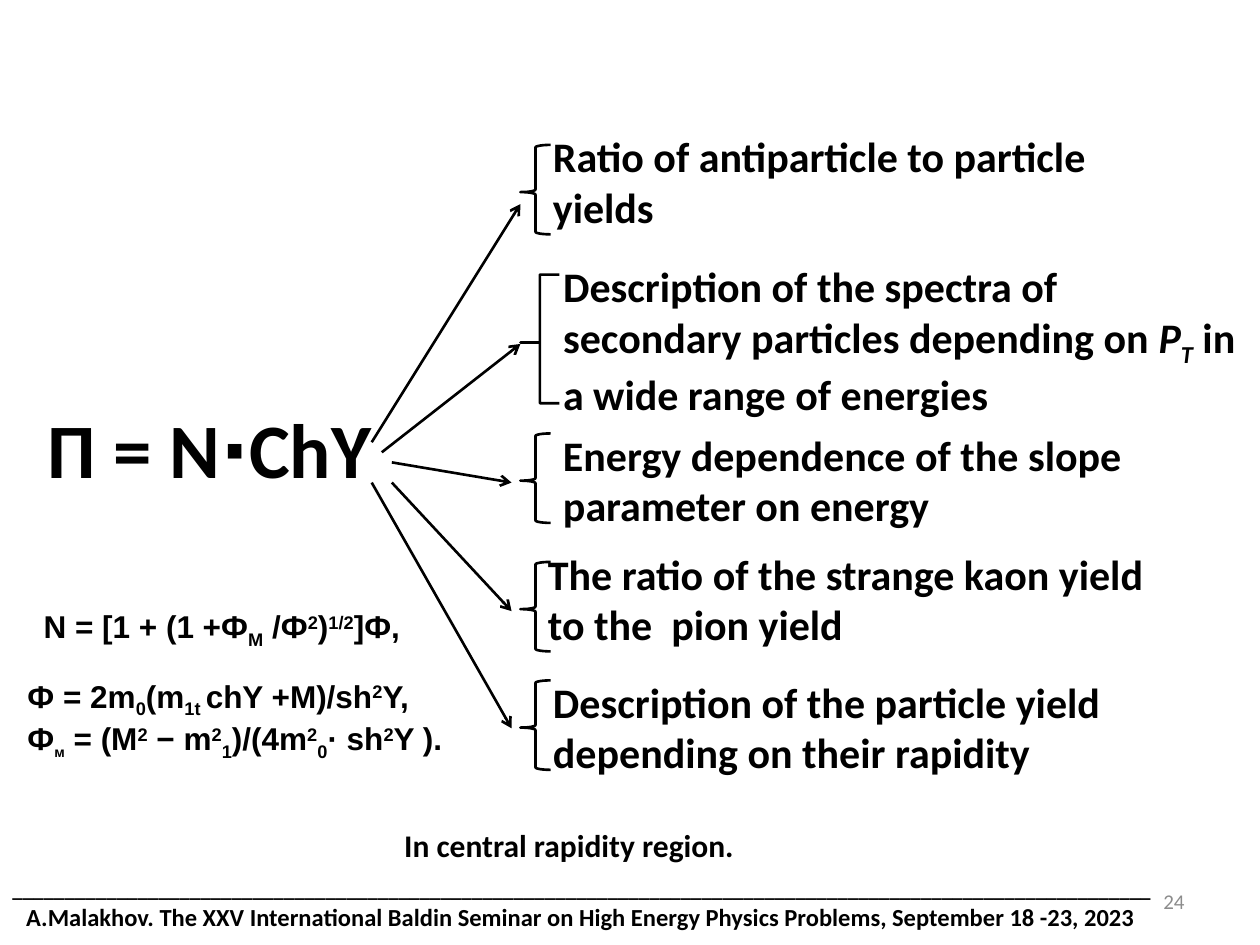
from dataclasses import dataclass

from lxml.etree import SubElement
from pptx import Presentation
from pptx.dml.color import RGBColor
from pptx.enum.shapes import MSO_CONNECTOR, MSO_SHAPE
from pptx.enum.text import MSO_ANCHOR, PP_ALIGN
from pptx.oxml.ns import qn
from pptx.util import Inches, Pt

BLACK, GRAY = "000000", "8C8C8C"
SUB, SUP = -25, 30
BRACE_LEFT = 4.13


@dataclass
class Span:
    text: str
    baseline: int = 0
    italic: bool = False
    size: float | None = None


@dataclass
class Property:
    """One consequence: its text box, its brace and the arrow to it."""
    spans: list[Span]
    box: tuple[float, float, float, float]
    brace_top: float
    arrow_from: tuple[float, float]
    arrow_to: tuple[float, float]
    brace_size: tuple[float, float] = (0.24, 0.71)
    curl: float = 0.083


def color(value: str) -> RGBColor:
    return RGBColor.from_string(value)


def sub(text: str, **options) -> Span:
    return Span(text, SUB, **options)


def sup(text: str) -> Span:
    return Span(text, SUP)


def add_text(page, box, lines: list[list[Span]], size: float, font="Calibri", bold=True,
             fill=BLACK, align=PP_ALIGN.LEFT, anchor=MSO_ANCHOR.TOP, wrap=True):
    frame = page.shapes.add_textbox(*map(Inches, box)).text_frame
    frame.word_wrap = wrap
    frame.vertical_anchor = anchor
    for index, spans in enumerate(lines):
        para = frame.paragraphs[0] if index == 0 else frame.add_paragraph()
        para.alignment = align
        para.font.name, para.font.size, para.font.bold = font, Pt(size), bold
        para.font.color.rgb = color(fill)
        for span in spans:
            run = para.add_run()
            run.text = span.text
            if span.italic:
                run.font.italic = True
            if span.size:
                run.font.size = Pt(span.size)
            if span.baseline:
                run._r.get_or_add_rPr().set("baseline", str(span.baseline * 1000))
    return frame


def add_arrow(page, start: tuple[float, float], end: tuple[float, float]) -> None:
    arrow = page.shapes.add_connector(MSO_CONNECTOR.STRAIGHT, *map(Inches, start + end))
    arrow.line.color.rgb = color(BLACK)
    arrow.line.width = Pt(1.5)
    SubElement(arrow.line._get_or_add_ln(), qn("a:tailEnd"), type="arrow")
    SubElement(arrow._element.spPr, qn("a:effectLst"))


def add_brace(page, top: float, size: tuple[float, float], curl: float) -> None:
    brace = page.shapes.add_shape(MSO_SHAPE.LEFT_BRACE, *map(Inches, (BRACE_LEFT, top) + size))
    brace.adjustments[0], brace.adjustments[1] = curl, 0.528
    brace.shadow.inherit = False
    brace.fill.background()
    brace.line.color.rgb = color(BLACK)
    brace.line.width = Pt(1.5)


PROPERTIES = [
    Property([Span("Ratio of antiparticle to particle yields")],
             (4.29, 0.99, 5.2, 0.91), 1.15, (2.95, 3.51), (4.13, 1.62)),
    Property([Span("Description of the spectra of secondary particles depending on "),
              Span("P", italic=True), sub("T", italic=True),
              Span(" in a wide range of energies")],
             (4.37, 2.02, 5.59, 1.31), 2.18, (3.03, 3.59), (4.13, 2.73), (0.31, 1.02), 0),
    Property([Span("Energy dependence of the slope parameter on energy")],
             (4.37, 3.36, 4.96, 0.91), 3.44, (3.11, 3.67), (4.06, 3.83)),
    Property([Span("The ratio of the strange kaon yield to the  pion yield")],
             (4.25, 4.3, 5.24, 0.91), 4.46, (3.11, 3.83), (4.06, 4.85)),
    Property([Span("Description of the particle yield depending on their rapidity")],
             (4.29, 5.32, 5.28, 0.91), 5.4, (2.95, 3.83), (4.06, 5.78)),
]

N_FORMULA = [Span("N = [1 + (1 +Ф"), sub("М"), Span(" /Ф"), sup("2"), Span(")"),
             sup("1/2"), Span("]Ф,")]
PHI_FORMULAS = [
    [Span("Ф = 2m"), sub("0"), Span("(m"), sub("1t "), Span("chY +M)/sh"), sup("2"), Span("Y,")],
    [Span("Ф"), sub("м", size=14), Span(" = (M"), sup("2"), Span(" − m"), sup("2"), sub("1"),
     Span(")/(4m"), sup("2"), sub("0"), Span("· sh"), sup("2"), Span("Y ).")],
]


def main() -> None:
    deck = Presentation()
    deck.slide_width, deck.slide_height = Inches(10), Inches(7.5)
    page = deck.slides.add_slide(deck.slide_layouts[6])

    # Main equation and what follows from it
    add_text(page, (0.28, 3.14, 2.83, 0.84), [[Span("П = N∙ChY")]], 44)
    for item in PROPERTIES:
        add_text(page, item.box, [item.spans], 24)
        add_arrow(page, item.arrow_from, item.arrow_to)
        add_brace(page, item.brace_top, item.brace_size, item.curl)

    # Definitions
    add_text(page, (0.2, 4.77, 3.12, 0.4), [N_FORMULA], 18, "Arial",
             align=PP_ALIGN.CENTER, wrap=False)
    add_text(page, (0.12, 5.32, 3.7, 0.71), PHI_FORMULAS, 18, "Arial")
    add_text(page, (3.11, 6.51, 3.07, 0.4), [[Span("In central rapidity region.")]], 18)

    # Footer and page number
    add_text(page, (7.17, 6.95, 2.33, 0.4), [[Span("24")]], 12, bold=False, fill=GRAY,
             align=PP_ALIGN.RIGHT, anchor=MSO_ANCHOR.MIDDLE)
    footer = add_text(page, (0, 6.91, 9.33, 0.54), [
        [Span("_" * 109)],
        [Span("A.Malakhov. The XXV International Baldin Seminar on High Energy Physics "
              "Problems, September 18 -23, 2023", size=14)],
    ], 12, align=PP_ALIGN.JUSTIFY)
    footer.paragraphs[1]._p.get_or_add_pPr().set("marL", str(Inches(0.11)))

    deck.save("out.pptx")


if __name__ == "__main__":
    main()
